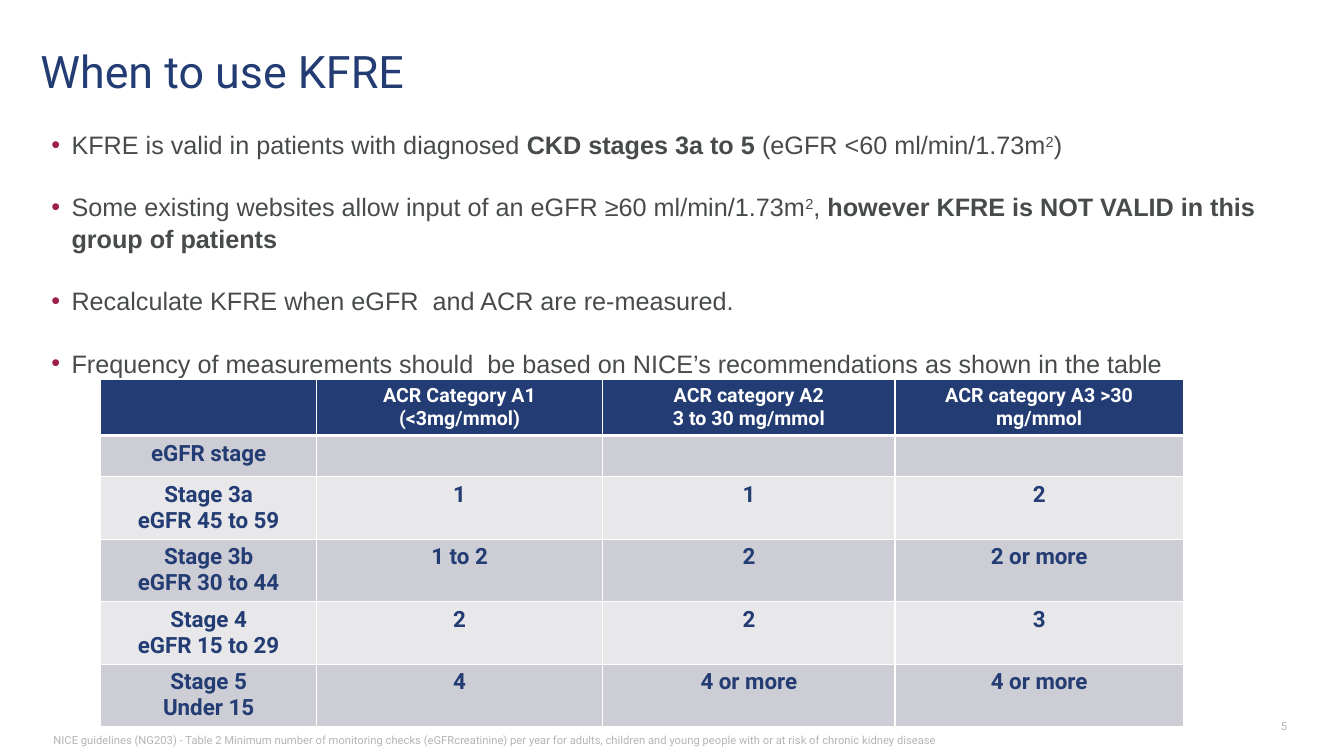
from dataclasses import dataclass
from typing import NamedTuple

import pptx
import pptx.dml.color
import pptx.enum.text
import pptx.oxml.ns
import pptx.util
from lxml import etree

ALIGN = pptx.enum.text.PP_ALIGN
ANCHOR = pptx.enum.text.MSO_ANCHOR


@dataclass(frozen=True)
class Theme:
    navy: str = "233C73"
    body_grey: str = "484B4C"
    note_grey: str = "B7B4B3"
    bullet: str = "9C1F4C"
    white: str = "FFFFFF"
    bands: tuple[str, str] = ("CDCED5", "E8E8EB")
    heading_font: str = "Roboto"
    body_font: str = "Arial"
    title_size: float = 32
    body_size: float = 18
    cell_size: float = 16
    header_size: float = 14
    note_size: float = 8


class Area(NamedTuple):
    """Left, top, width and height in grid units."""
    left: float
    top: float
    width: float
    height: float


class Span(NamedTuple):
    text: str
    bold: bool = False
    raised: bool = False


class Note(NamedTuple):
    text: str
    area: Area
    align: ALIGN


THEME = Theme()
GRID_COLUMNS, GRID_ROWS = 133.33, 75

TITLE_AREA = Area(4, 0.1, 78.6, 13.8)
BODY_AREA = Area(5.1, 12.7, 122.1, 26.2)
TABLE_AREA = Area(10, 37.6, 107.4, 34.5)
TABLE_COLUMNS = [21.4, 28.4, 29, 28.6]
TABLE_ROWS = [5.6, 4.1] + [6.2] * 4

BULLETS = [
    [Span("KFRE is valid in patients with diagnosed "), Span("CKD stages 3a to 5 ", bold=True),
     Span("(eGFR <60 ml/min/1.73m"), Span("2", raised=True), Span(")")],
    [Span("Some existing websites allow input of an eGFR ≥60 ml/min/1.73m"),
     Span("2", raised=True), Span(", "),
     Span("however KFRE is NOT VALID in this group of patients", bold=True)],
    [Span("Recalculate KFRE when eGFR  and ACR are re-measured.")],
    [Span("Frequency of measurements should  be based on NICE’s recommendations "
          "as shown in the table")],
]

CHECKS = [
    ["", "ACR Category A1 (<3mg/mmol)", "ACR category A2\n3 to 30 mg/mmol",
     "ACR category A3 >30 mg/mmol"],
    ["eGFR stage", "", "", ""],
    ["Stage 3a\neGFR 45 to 59", "1", "1", "2"],
    ["Stage 3b\neGFR 30 to 44", "1 to 2", "2", "2 or more"],
    ["Stage 4\neGFR 15 to 29", "2", "2", "3"],
    ["Stage 5\nUnder 15", "4", "4 or more", "4 or more"],
]

NOTES = [
    Note("NICE guidelines (NG203) - Table 2 Minimum number of monitoring checks "
         "(eGFRcreatinine) per year for adults, children and young people with or at risk "
         "of chronic kidney disease", Area(5.3, 72.8, 120.1, 1.3), ALIGN.LEFT),
    Note("5", Area(123.8, 71.4, 3.9, 1.3), ALIGN.RIGHT),
]


def grid(units: float) -> pptx.util.Length:
    return pptx.util.Inches(units / 10)


def rgb(value: str) -> pptx.dml.color.RGBColor:
    return pptx.dml.color.RGBColor.from_string(value)


def write(para, text: str, *, size: float, color: str, font: str = THEME.heading_font,
          bold: bool = False, raised: bool = False) -> None:
    span = para.add_run()
    span.text = text
    span.font.size = pptx.util.Pt(size)
    span.font.name = font
    span.font.bold = bold
    span.font.color.rgb = rgb(color)
    if raised:
        span._r.get_or_add_rPr().set("baseline", "30000")


def place(shape, area: Area) -> None:
    shape.left, shape.top, shape.width, shape.height = map(grid, area)


def prepare(frame, anchor: ANCHOR = ANCHOR.TOP) -> None:
    frame.margin_left = frame.margin_right = frame.margin_top = frame.margin_bottom = 0
    frame.word_wrap = True
    frame.auto_size = pptx.enum.text.MSO_AUTO_SIZE.NONE
    frame.vertical_anchor = anchor


def add_element(parent, tag: str, **attributes: str):
    return etree.SubElement(parent, pptx.oxml.ns.qn(tag), attributes)


def add_bullet(para) -> None:
    properties = para._p.get_or_add_pPr()
    properties.set("marL", str(grid(2)))
    properties.set("indent", str(grid(-2)))
    add_element(add_element(properties, "a:buClr"), "a:srgbClr", val=THEME.bullet)
    add_element(properties, "a:buFont", typeface=THEME.body_font)
    add_element(properties, "a:buChar", char="•")


def add_title(page) -> None:
    title = page.shapes.title
    place(title, TITLE_AREA)
    prepare(title.text_frame, ANCHOR.MIDDLE)
    para = title.text_frame.paragraphs[0]
    para.alignment = ALIGN.LEFT
    write(para, "When to use KFRE", size=THEME.title_size, color=THEME.navy)


def add_body(page) -> None:
    body = page.placeholders[1]
    place(body, BODY_AREA)
    frame = body.text_frame
    prepare(frame)
    for index, spans in enumerate(BULLETS):
        para = frame.add_paragraph() if index else frame.paragraphs[0]
        para.line_spacing = 1.05
        para.space_before = pptx.util.Pt(21.75 if index else 0)
        para.space_after = pptx.util.Pt(0)
        add_bullet(para)
        for span in spans:
            write(para, span.text, size=THEME.body_size, color=THEME.body_grey,
                  font=THEME.body_font, bold=span.bold, raised=span.raised)


def add_borders(cell, row: int) -> None:
    properties = cell._tc.get_or_add_tcPr()
    thick_side = {0: "B", 1: "T"}.get(row)
    for side in "LRTB":
        width = pptx.util.Pt(3 if side == thick_side else 1)
        line = add_element(properties, f"a:ln{side}", w=str(width))
        add_element(add_element(line, "a:solidFill"), "a:srgbClr", val=THEME.white)


def fill_cell(cell, text: str, row: int) -> None:
    header = row == 0
    add_borders(cell, row)
    cell.fill.solid()
    cell.fill.fore_color.rgb = rgb(THEME.navy if header else THEME.bands[(row - 1) % 2])
    if not text:
        return
    for index, line in enumerate(text.split("\n")):
        para = cell.text_frame.add_paragraph() if index else cell.text_frame.paragraphs[0]
        para.alignment = ALIGN.CENTER
        write(para, line, bold=True, size=THEME.header_size if header else THEME.cell_size,
              color=THEME.white if header else THEME.navy)


def add_checks_table(page) -> None:
    table = page.shapes.add_table(len(TABLE_ROWS), len(TABLE_COLUMNS),
                                  *map(grid, TABLE_AREA)).table
    for column, width in zip(table.columns, TABLE_COLUMNS):
        column.width = grid(width)
    for index, (row, height) in enumerate(zip(table.rows, TABLE_ROWS)):
        row.height = grid(height)
        for cell, text in zip(row.cells, CHECKS[index]):
            fill_cell(cell, text, index)


def add_note(page, note: Note) -> None:
    box = page.shapes.add_textbox(*map(grid, note.area))
    prepare(box.text_frame)
    para = box.text_frame.paragraphs[0]
    para.alignment = note.align
    write(para, note.text, size=THEME.note_size, color=THEME.note_grey)


def main() -> None:
    deck = pptx.Presentation()
    deck.slide_width, deck.slide_height = grid(GRID_COLUMNS), grid(GRID_ROWS)
    page = deck.slides.add_slide(deck.slide_layouts[1])
    # Heading and guidance
    add_title(page)
    add_body(page)
    # Source line and page number
    for note in NOTES:
        add_note(page, note)
    # Monitoring frequency
    add_checks_table(page)
    deck.save("out.pptx")


if __name__ == "__main__":
    main()
